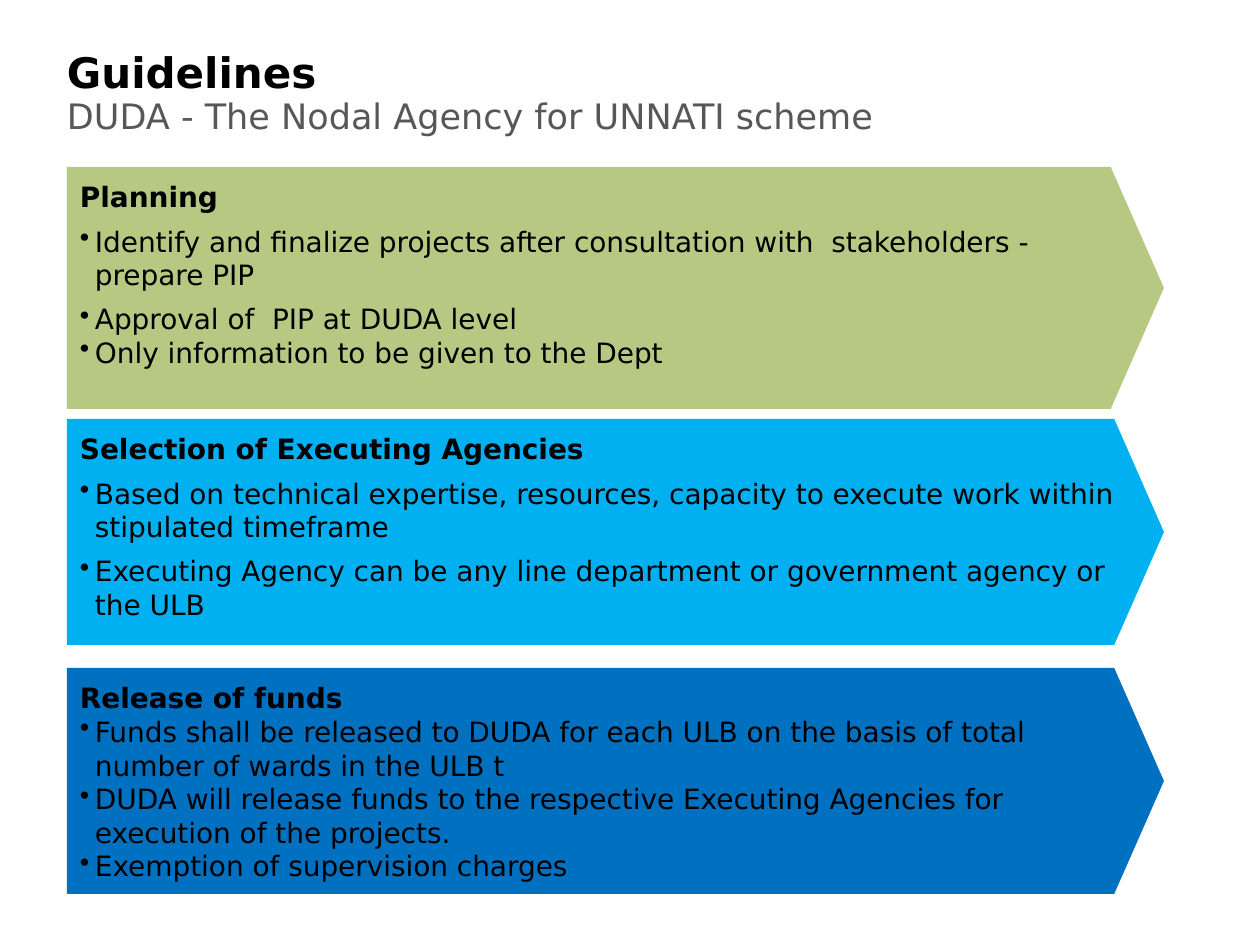
"""Build the guidelines slide: a heading and three arrow panels."""
from lxml import etree
from pptx import Presentation
from pptx import util as u
from pptx.dml.color import RGBColor
from pptx.enum import shapes, text
from pptx.oxml.ns import qn

PX = 914400 // 126
FONT = "DejaVu Sans"
BLACK = RGBColor(0, 0, 0)
GRAY = RGBColor(0x57, 0x57, 0x57)
GREEN = RGBColor(0xB6, 0xC8, 0x82)
SKY = RGBColor(0x00, 0xB0, 0xF0)
BLUE = RGBColor(0x00, 0x70, 0xC0)
LEFT, WIDE, INDENT, INSET = 67, 1097, 15, 13

# top, height, fill, head, bullets as (space before, words)
PANELS = [
    (167, 242, GREEN, "Planning", [
        (6, "Identify and finalize projects after consultation with  stakeholders - prepare PIP"),
        (6, "Approval of  PIP at DUDA level"),
        (0, "Only information to be given to the Dept")]),
    (419, 226, SKY, "Selection of Executing Agencies", [
        (6, "Based on technical expertise, resources, capacity to execute work within stipulated timeframe"),
        (6, "Executing Agency can be any line department or government agency or the ULB")]),
    (668, 226, BLUE, "Release of funds", [
        (0, "Funds shall be released to DUDA for each ULB on the basis of total number of wards in the ULB t"),
        (0, "DUDA will release funds to the respective Executing Agencies for execution of the projects."),
        (0, "Exemption of supervision charges")]),
]


def px(*nums):
    return [n * PX for n in nums]


def setup(frame, inset, anchor=text.MSO_ANCHOR.TOP):
    frame.word_wrap = True
    frame.vertical_anchor = anchor
    frame.margin_left = frame.margin_right = inset * PX
    frame.margin_top = frame.margin_bottom = inset * PX


def write(para, words, size=16, color=BLACK, bold=False, before=0, bullet=False):
    para.alignment = text.PP_ALIGN.LEFT
    para.space_before = u.Pt(before)
    run = para.add_run()
    run.text = words
    font = run.font
    font.name, font.size, font.bold = FONT, u.Pt(size), bold
    font.color.rgb = color
    if bullet:
        para.level = 1
        props = para._p.get_or_add_pPr()
        props.set("marL", str(INDENT * PX))
        props.set("indent", str(-INDENT * PX))
        etree.SubElement(props, qn("a:buChar")).set("char", "•")


def label(slide, box, words, inset, anchor, **style):
    frame = slide.shapes.add_textbox(*px(*box)).text_frame
    setup(frame, inset, anchor)
    write(frame.paragraphs[0], words, **style)


def panel(slide, top, high, fill, head, items):
    shape = slide.shapes.add_shape(
        shapes.MSO_SHAPE.PENTAGON, *px(LEFT, top, WIDE, high))
    shape.adjustments[0] = 0.22
    shape.shadow.inherit = False
    shape.fill.solid()
    shape.fill.fore_color.rgb = fill
    shape.line.fill.background()
    frame = shape.text_frame
    setup(frame, INSET)
    write(frame.paragraphs[0], head, bold=True, before=4)
    for before, words in items:
        write(frame.add_paragraph(), words, before=before, bullet=True)


def main():
    deck = Presentation()
    deck.slide_width, deck.slide_height = u.Inches(10), u.Inches(7.5)
    slide = deck.slides.add_slide(deck.slide_layouts[6])
    label(slide, (LEFT - INSET, 40, 1150, 64), "Guidelines", INSET,
          text.MSO_ANCHOR.MIDDLE, size=24, bold=True)
    for row in PANELS:
        panel(slide, *row)
    label(slide, (LEFT, 94, 1150, 105), "DUDA - The Nodal Agency for UNNATI scheme",
          0, text.MSO_ANCHOR.TOP, size=20, color=GRAY, before=10)
    deck.save("out.pptx")


if __name__ == "__main__":
    main()
